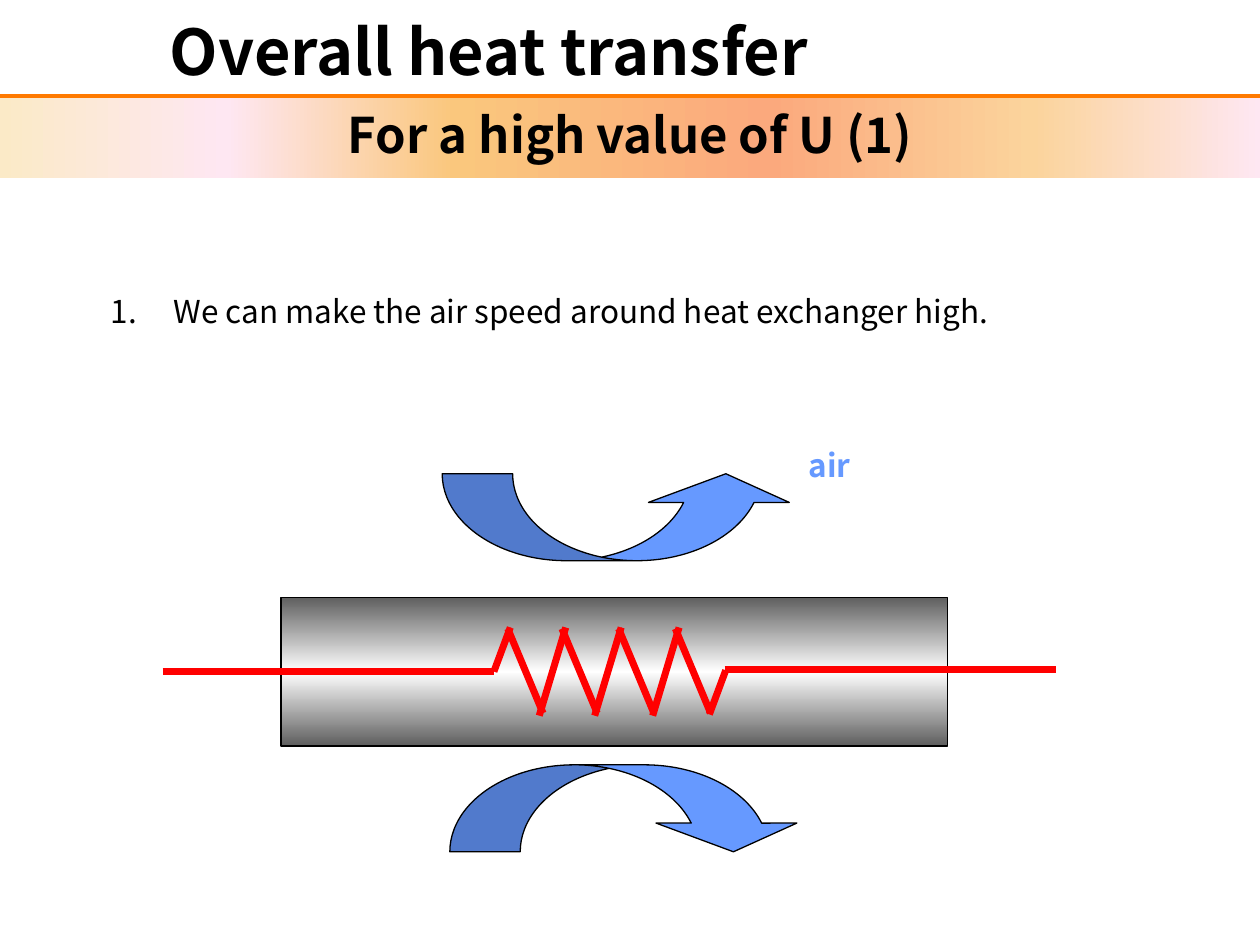
from lxml import etree
from pptx import Presentation
from pptx.dml.color import RGBColor
from pptx.enum.shapes import MSO_CONNECTOR, MSO_SHAPE
from pptx.enum.text import MSO_ANCHOR, PP_ALIGN
from pptx.oxml.ns import qn
from pptx.util import Inches, Pt

FONT = "Noto Sans CJK KR"
BLACK = RGBColor(0x00, 0x00, 0x00)
RED = RGBColor(0xFF, 0x00, 0x00)
ORANGE = RGBColor(0xFF, 0x7A, 0x00)
BLUE = RGBColor(0x66, 0x99, 0xFF)
TUBE_STOPS = [(0, "5F5F5F"), (50, "FFFFFF"), (100, "5F5F5F")]
BAND_STOPS = [(0, "FBEAC7"), (18, "FEE7F2"), (36, "FAC77D"),
              (61, "FBA97D"), (82, "FBD49C"), (100, "FEE7F2")]

deck = Presentation()
deck.slide_width, deck.slide_height = Inches(10), Inches(7.5)
page = deck.slides.add_slide(deck.slide_layouts[6])


def add_block(text, left, top, width, height, size, bold=False, color=BLACK,
              align=PP_ALIGN.LEFT, anchor=MSO_ANCHOR.TOP, stops=None, angle=0, shape=None):
    """Add a text box, or a preset shape with an optional gradient."""
    place = [Inches(value) for value in (left, top, width, height)]
    if shape is None:
        box = page.shapes.add_textbox(*place)
    else:
        box = page.shapes.add_shape(shape, *place)
        box.shadow.inherit = False
    if stops:
        box.fill.gradient()
        box.fill.gradient_angle = angle
        stop_list = box._element.spPr.find(qn("a:gradFill")).find(qn("a:gsLst"))
        for old in list(stop_list):
            stop_list.remove(old)
        for position, value in stops:
            stop = etree.SubElement(stop_list, qn("a:gs"), pos=str(position * 1000))
            etree.SubElement(stop, qn("a:srgbClr"), val=value)
    if text:
        box.text_frame.word_wrap = True
        box.text_frame.vertical_anchor = anchor
        para = box.text_frame.paragraphs[0]
        para.alignment = align
        span = para.add_run()
        span.text = text
        span.font.name, span.font.size, span.font.bold = FONT, Pt(size), bold
        span.font.color.rgb = color
    return box


def add_line(x1, y1, x2, y2, color, width):
    line = page.shapes.add_connector(MSO_CONNECTOR.STRAIGHT, Inches(x1), Inches(y1),
                                     Inches(x2), Inches(y2))
    line.line.color.rgb = color
    line.line.width = Pt(width)
    etree.SubElement(line._element.spPr, qn("a:effectLst"))


# Rule under the title
add_line(0, 0.76, 10, 0.76, ORANGE, 2)

# Numbered statement
statement = add_block("We can make the air speed around heat exchanger high.",
                      0.78, 2.27, 7.97, 0.4, 18)
numbering = statement.text_frame.paragraphs[0]._p.get_or_add_pPr()
numbering.set("marL", str(Inches(0.5)))
numbering.set("indent", str(Inches(-0.5)))
etree.SubElement(numbering, qn("a:buFont"), typeface=FONT)
etree.SubElement(numbering, qn("a:buAutoNum"), type="arabicPeriod")

# Heat exchanger tube
tube = add_block("", 2.23, 4.74, 5.29, 1.18, 18, stops=TUBE_STOPS, angle=90,
                 shape=MSO_SHAPE.RECTANGLE)
tube.line.color.rgb = BLACK
tube.line.width = Pt(0.75)

# Heating wire: leads, end pieces, then falling and rising strokes
for ends in [(1.29, 5.33, 3.92, 5.33), (5.75, 5.31, 8.38, 5.31),
             (3.92, 5.33, 4.05, 4.98), (5.63, 5.67, 5.76, 5.32)]:
    add_line(*ends, RED, 4)
for x in (4.03, 4.46, 4.91, 5.36):
    add_line(x, 4.99, x + 0.28, 5.66, RED, 4)
for x in (4.28, 4.72, 5.18):
    add_line(x, 5.68, x + 0.21, 4.98, RED, 4)

# Air flow arrows above and below the tube
for kind, left, top in [(MSO_SHAPE.CURVED_UP_ARROW, 3.51, 3.76),
                        (MSO_SHAPE.CURVED_DOWN_ARROW, 3.57, 6.07)]:
    arrow = add_block("", left, top, 2.81, 0.69, 18, shape=kind)
    for index, value in enumerate((0.81, 1.62, 0.33)):
        arrow.adjustments[index] = value
    arrow.fill.solid()
    arrow.fill.fore_color.rgb = BLUE
    arrow.line.color.rgb = BLACK
    arrow.line.width = Pt(0.75)
add_block("air", 6.32, 3.49, 1.1, 0.4, 18, bold=True, color=BLUE)

# Title and subtitle band
add_block("Overall heat transfer", 0, 0, 7.76, 0.79, 36, bold=True,
          align=PP_ALIGN.CENTER, anchor=MSO_ANCHOR.MIDDLE)
band = add_block("For a high value of U (1)", 0, 0.78, 10, 0.63, 28, bold=True,
                 align=PP_ALIGN.CENTER, stops=BAND_STOPS, shape=MSO_SHAPE.RECTANGLE)
band.line.fill.background()

deck.save("out.pptx")
